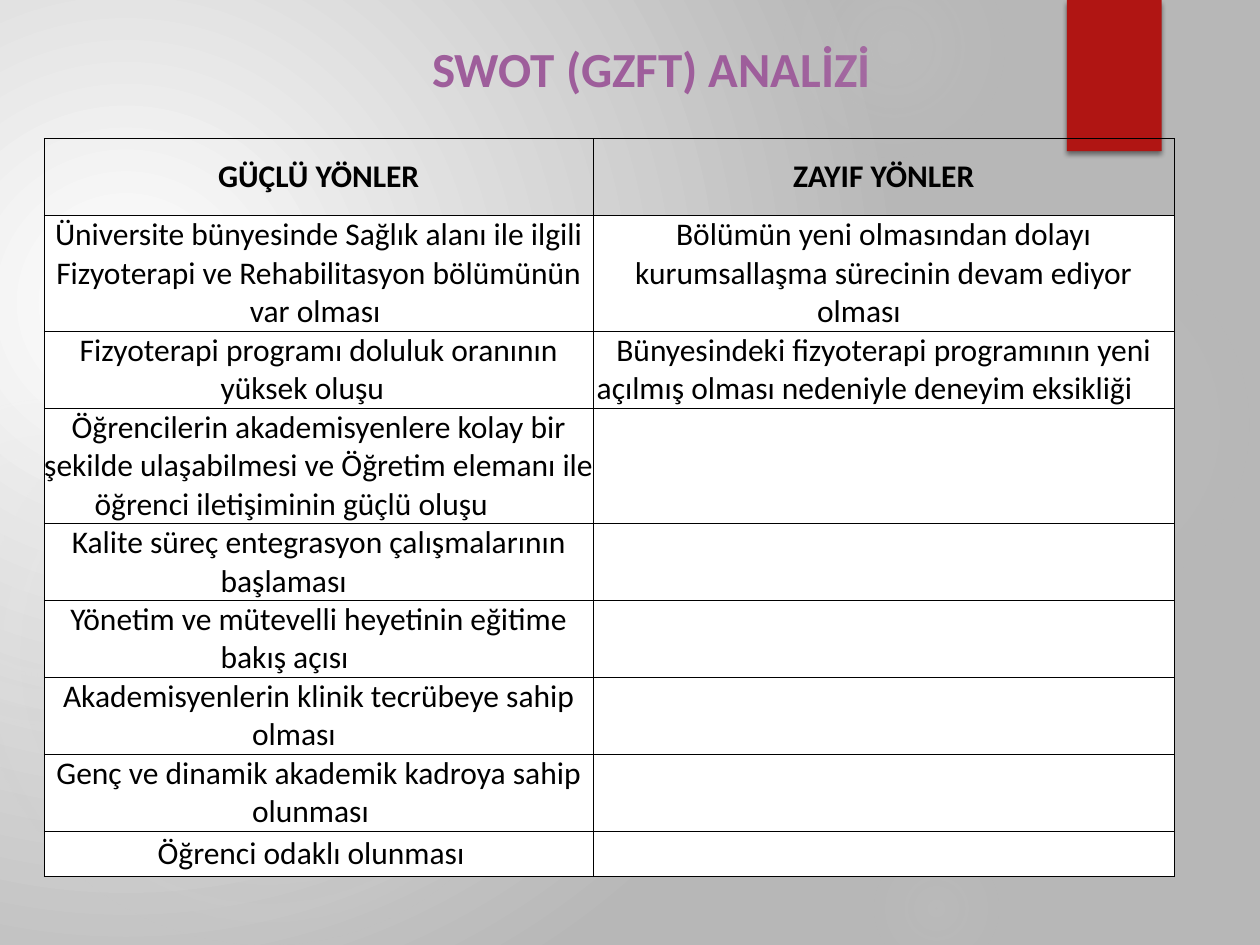
from typing import NamedTuple

from pptx import Presentation
from pptx.dml.color import RGBColor
from pptx.enum.shapes import MSO_SHAPE
from pptx.enum.text import MSO_ANCHOR, PP_ALIGN
from pptx.oxml import parse_xml
from pptx.oxml.ns import nsdecls, qn
from pptx.util import Cm, Pt

WHITE = RGBColor(0xFF, 0xFF, 0xFF)
BLACK = RGBColor(0x00, 0x00, 0x00)
GREY = RGBColor(0xB7, 0xB7, 0xB7)
GLOW_GREY = RGBColor(0xD9, 0xD9, 0xD9)
RED = RGBColor(0xB0, 0x15, 0x13)
PURPLE = RGBColor(0x9E, 0x5E, 0x9B)
FONT = "Calibri"


class Stop(NamedTuple):
    position: int
    color: RGBColor
    opacity: int = 100


class Glow(NamedTuple):
    left: float
    top: float
    diameter: float
    opacities: tuple[int, int]
    fade_end: int


class Row(NamedTuple):
    height: float
    strength: str
    weakness: str = ""


GLOWS = [
    Glow(17.5, 4.65, 7.82, (7, 6), 69),
    Glow(15.8, -1.27, 4.45, (14, 7), 73),
    Glow(17.5, 16.94, 2.74, (9, 5), 66),
    Glow(-0.43, 7.42, 11.63, (11, 10), 75),
    Glow(-2.34, 8.05, 6.55, (8, 8), 72),
]

TAIL = "\t "
ONE_LINE, TWO_LINES, THREE_LINES = 0.92, 1.53, 2.3
ROWS = [
    Row(1.56, "GÜÇLÜ YÖNLER", "ZAYIF YÖNLER"),
    Row(THREE_LINES,
        "Üniversite bünyesinde Sağlık alanı ile ilgili Fizyoterapi ve Rehabilitasyon bölümünün var olması ",
        "Bölümün yeni olmasından dolayı kurumsallaşma sürecinin devam ediyor olması" + TAIL),
    Row(TWO_LINES,
        "Fizyoterapi programı doluluk oranının yüksek oluşu" + TAIL,
        "Bünyesindeki fizyoterapi programının yeni açılmış olması nedeniyle deneyim eksikliği" + TAIL),
    Row(THREE_LINES,
        "Öğrencilerin akademisyenlere kolay bir şekilde ulaşabilmesi ve Öğretim elemanı "
        "ile öğrenci iletişiminin güçlü oluşu" + TAIL),
    Row(TWO_LINES, "Kalite süreç entegrasyon çalışmalarının başlaması" + TAIL),
    Row(TWO_LINES, "Yönetim ve mütevelli heyetinin eğitime bakış açısı" + TAIL),
    Row(TWO_LINES, "Akademisyenlerin klinik tecrübeye sahip olması" + TAIL),
    Row(TWO_LINES, "Genç ve dinamik akademik kadroya sahip olunması" + TAIL),
    Row(ONE_LINE, "Öğrenci odaklı olunması" + TAIL),
]
COLUMN_WIDTHS = (11.07, 11.71)


def set_circle_gradient(owner, stops: list[Stop], center: tuple[int, int, int, int]) -> None:
    stop_xml = "".join(
        f'<a:gs pos="{stop.position * 1000}"><a:srgbClr val="{stop.color}">'
        f'<a:alpha val="{stop.opacity * 1000}"/></a:srgbClr></a:gs>'
        for stop in stops
    )
    left, top, right, bottom = (value * 1000 for value in center)
    gradient = parse_xml(
        f'<a:gradFill {nsdecls("a")} rotWithShape="1"><a:gsLst>{stop_xml}</a:gsLst>'
        f'<a:path path="circle"><a:fillToRect l="{left}" t="{top}" r="{right}" b="{bottom}"/>'
        "</a:path></a:gradFill>"
    )
    default = owner.find(".//" + qn("a:gradFill"))
    default.getparent().replace(default, gradient)


def add_plain_shape(slide, kind: MSO_SHAPE, left: float, top: float, width: float, height: float):
    shape = slide.shapes.add_shape(kind, Cm(left), Cm(top), Cm(width), Cm(height))
    shape.line.fill.background()
    shape.shadow.inherit = False
    return shape


def add_glow(slide, glow: Glow) -> None:
    shape = add_plain_shape(slide, MSO_SHAPE.OVAL, glow.left, glow.top, glow.diameter, glow.diameter)
    shape.fill.gradient()
    stops = [
        Stop(position, GLOW_GREY, opacity)
        for position, opacity in zip((0, 36, glow.fade_end), (*glow.opacities, 0))
    ]
    set_circle_gradient(shape.element, stops, (50, 50, 50, 50))


def add_ribbon(slide) -> None:
    ribbon = add_plain_shape(slide, MSO_SHAPE.RECTANGLE, 21.51, 0, 1.91, 3.05)
    ribbon.fill.solid()
    ribbon.fill.fore_color.rgb = RED
    ribbon.element.spPr.find(qn("a:effectLst")).append(parse_xml(
        f'<a:outerShdw {nsdecls("a")} blurRad="{Pt(3)}" dist="{Pt(2)}" dir="5400000" rotWithShape="0">'
        f'<a:srgbClr val="{BLACK}"><a:alpha val="45000"/></a:srgbClr></a:outerShdw>'
    ))


def add_text(text_frame, text: str, size: int, color: RGBColor, bold: bool) -> None:
    paragraph = text_frame.paragraphs[0]
    paragraph.alignment = PP_ALIGN.CENTER
    run = paragraph.add_run()
    run.text = text
    run.font.name = FONT
    run.font.size = Pt(size)
    run.font.bold = bold
    run.font.color.rgb = color


def format_title(slide) -> None:
    title = slide.shapes.title
    title.left, title.top, title.width, title.height = Cm(7.01), Cm(0.64), Cm(12.24), Cm(1.45)
    title.text_frame.word_wrap = True
    title.text_frame.vertical_anchor = MSO_ANCHOR.MIDDLE
    add_text(title.text_frame, "SWOT (GZFT) ANALİZİ", 28, PURPLE, True)


def format_cell(cell, text: str, is_header: bool) -> None:
    cell.margin_left = cell.margin_top = cell.margin_right = cell.margin_bottom = 0
    cell.vertical_anchor = MSO_ANCHOR.MIDDLE
    if text:
        add_text(cell.text_frame, text, 18, BLACK, is_header)
    properties = cell._tc.get_or_add_tcPr()
    for side in ("lnL", "lnR", "lnT", "lnB"):
        properties.append(parse_xml(
            f'<a:{side} {nsdecls("a")} w="{Pt(0.5)}"><a:solidFill>'
            f'<a:srgbClr val="{BLACK}"/></a:solidFill></a:{side}>'
        ))
    if is_header:
        cell.fill.background()
    else:
        cell.fill.solid()
        cell.fill.fore_color.rgb = WHITE


def add_swot_table(slide) -> None:
    table = slide.shapes.add_table(
        len(ROWS), len(COLUMN_WIDTHS), Cm(0.89), Cm(2.79),
        Cm(sum(COLUMN_WIDTHS)), Cm(sum(row.height for row in ROWS)),
    ).table
    table.horz_banding = False
    for column, width in zip(table.columns, COLUMN_WIDTHS):
        column.width = Cm(width)
    for index, row in enumerate(ROWS):
        table.rows[index].height = Cm(row.height)
        for column_index, text in enumerate((row.strength, row.weakness)):
            format_cell(table.cell(index, column_index), text, index == 0)


def main() -> None:
    presentation = Presentation()
    presentation.slide_width = Cm(25.4)
    presentation.slide_height = Cm(19.05)
    slide = presentation.slides.add_slide(presentation.slide_layouts[5])
    slide.background.fill.gradient()
    set_circle_gradient(slide.element, [Stop(0, WHITE), Stop(100, GREY)], (45, 65, 125, 100))
    for glow in GLOWS:
        add_glow(slide, glow)
    add_ribbon(slide)
    format_title(slide)
    add_swot_table(slide)
    presentation.save("out.pptx")


if __name__ == "__main__":
    main()
